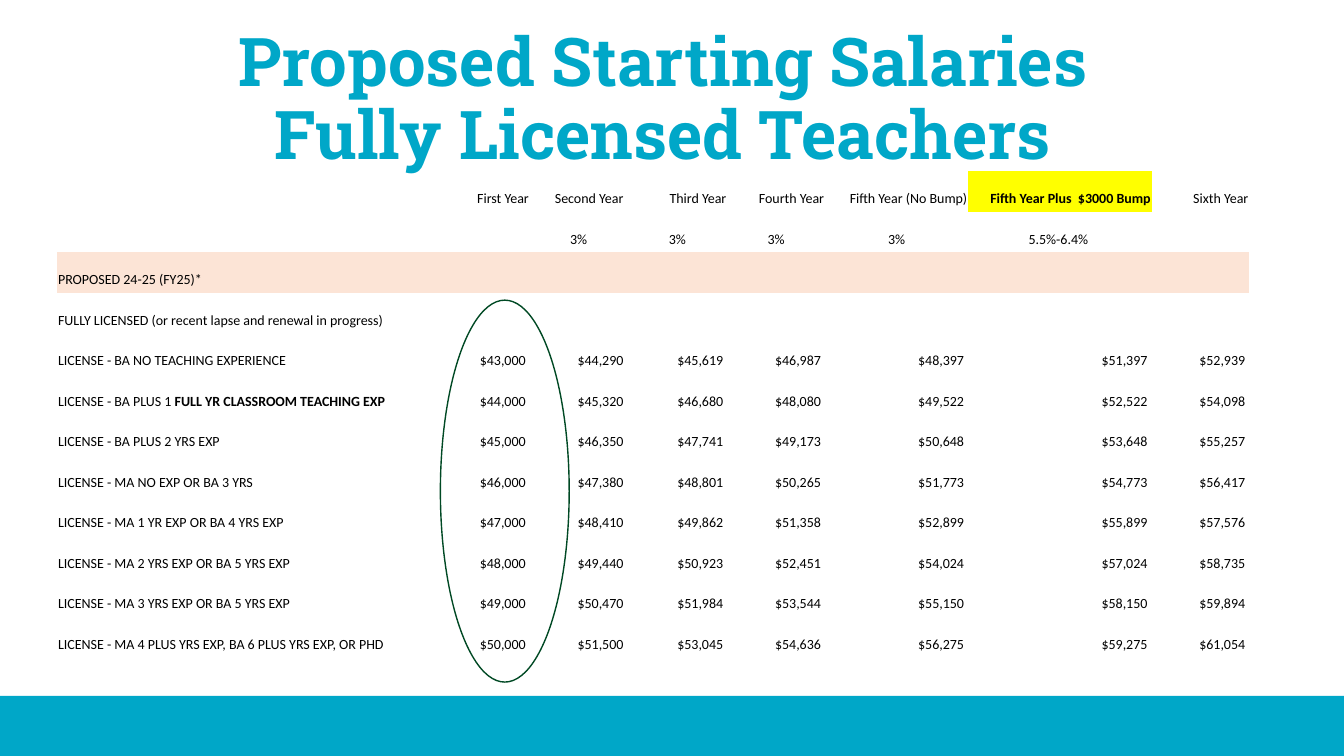
from pptx import Presentation
from pptx.dml.color import RGBColor
from pptx.enum.shapes import MSO_SHAPE
from pptx.enum.text import MSO_ANCHOR, MSO_AUTO_SIZE, PP_ALIGN
from pptx.oxml.ns import qn
from pptx.util import Pt

RECT, OVAL = MSO_SHAPE.RECTANGLE, MSO_SHAPE.OVAL
LEFT, CENTER, RIGHT = PP_ALIGN.LEFT, PP_ALIGN.CENTER, PP_ALIGN.RIGHT
MIDDLE, BOTTOM = MSO_ANCHOR.MIDDLE, MSO_ANCHOR.BOTTOM
NO_FIT = MSO_AUTO_SIZE.NONE

TEAL, GREEN, YELLOW, PEACH, BLACK = "00A7C8", "004924", "FFFF00", "FCE4D6", "000000"
NO_STYLE_NO_GRID = "{2D5ABB26-0587-4C30-8999-92F81FD0307C}"

COLUMN_WIDTHS = [267.84, 69.84, 69.84, 71.28, 69.84, 102.24, 131.04, 69.84]
ROW_HEIGHT = 28.92
BUMP_COLUMN, PROPOSED_ROW = 6, 2

HEADERS = ["", "First Year", "Second Year ", "Third Year", "Fourth Year",
           "Fifth Year (No Bump)", "Fifth Year Plus  $3000 Bump", "Sixth Year"]
RAISES = ["", "", "3%", "3%", "3%", "3%", "5.5%-6.4% ", ""]
SECTIONS = ["PROPOSED 24-25 (FY25)*",
            "FULLY LICENSED (or recent lapse and renewal in progress)"]
# A label in two parts has its second part in bold.
SALARIES = [
    (["LICENSE - BA NO TEACHING EXPERIENCE"],
     [43000, 44290, 45619, 46987, 48397, 51397, 52939]),
    (["LICENSE - BA PLUS 1", " FULL YR CLASSROOM TEACHING EXP"],
     [44000, 45320, 46680, 48080, 49522, 52522, 54098]),
    (["LICENSE - BA PLUS 2 YRS EXP"],
     [45000, 46350, 47741, 49173, 50648, 53648, 55257]),
    (["LICENSE - MA NO EXP OR BA 3 YRS"],
     [46000, 47380, 48801, 50265, 51773, 54773, 56417]),
    (["LICENSE - MA 1 YR EXP OR BA 4 YRS EXP"],
     [47000, 48410, 49862, 51358, 52899, 55899, 57576]),
    (["LICENSE - MA 2 YRS EXP OR BA 5 YRS EXP"],
     [48000, 49440, 50923, 52451, 54024, 57024, 58735]),
    (["LICENSE - MA 3 YRS EXP OR BA 5 YRS EXP"],
     [49000, 50470, 51984, 53544, 55150, 58150, 59894]),
    (["LICENSE - MA 4 PLUS YRS EXP, BA 6 PLUS YRS EXP, OR PHD"],
     [50000, 51500, 53045, 54636, 56275, 59275, 61054]),
]


def rgb(value):
    return RGBColor.from_string(value)


def set_margins(frame, left, top, right, bottom):
    frame.margin_left, frame.margin_top = Pt(left), Pt(top)
    frame.margin_right, frame.margin_bottom = Pt(right), Pt(bottom)


class SlideBuilder:
    title_font, body_font = "Roboto Slab", "Calibri"
    title_size, body_size = 48, 10

    def __init__(self, slide):
        self.slide = slide

    def format_font(self, p, name, size, color, bold=None):
        p.font.name, p.font.size, p.font.bold = name, Pt(size), bold
        p.font.color.rgb = rgb(color)

    def title(self, text, left, top, width, height):
        sp = self.slide.shapes.title
        sp.left, sp.top, sp.width, sp.height = map(Pt, (left, top, width, height))
        tf = sp.text_frame
        tf.auto_size, tf.word_wrap, tf.vertical_anchor = NO_FIT, True, MIDDLE
        set_margins(tf, 7.2, 7.2, 7.2, 7.2)
        p = tf.paragraphs[0]
        p.text, p.alignment, p.line_spacing = text, CENTER, 0.9
        self.format_font(p, self.title_font, self.title_size, TEAL, True)

    def shape(self, kind, left, top, width, height, fill=None, line=None):
        sp = self.slide.shapes.add_shape(kind, *map(Pt, (left, top, width, height)))
        sp.shadow.inherit = False
        if fill:
            sp.fill.solid()
            sp.fill.fore_color.rgb = rgb(fill)
        else:
            sp.fill.background()
        if line:
            sp.line.color.rgb, sp.line.width = rgb(line), Pt(1)
        else:
            sp.line.fill.background()

    def table(self, rows, widths, row_height, left, top):
        size = (left, top, sum(widths), row_height * rows)
        gf = self.slide.shapes.add_table(rows, len(widths), *map(Pt, size))
        for style_id in gf.element.iter(qn("a:tableStyleId")):
            style_id.text = NO_STYLE_NO_GRID
        table = gf.table
        table.first_row = table.horz_banding = False
        for column, width in zip(table.columns, widths):
            column.width = Pt(width)
        for row in table.rows:
            row.height = Pt(row_height)
        return table

    def cell(self, cell, parts, align, fill=None, bold=None):
        """Fill a cell; any part after the first is bold."""
        cell.vertical_anchor = BOTTOM
        set_margins(cell, 0.72, 0.72, 0.72, 2.88)
        if fill:
            cell.fill.solid()
            cell.fill.fore_color.rgb = rgb(fill)
        else:
            cell.fill.background()
        p = cell.text_frame.paragraphs[0]
        p.alignment = align
        self.format_font(p, self.body_font, self.body_size, BLACK, bold)
        for i, part in enumerate(parts):
            r = p.add_run()
            r.text = part
            if i:
                r.font.bold = True

    def salary_table(self, left, top):
        blanks = [[]] * (len(COLUMN_WIDTHS) - 1)
        rows = [[[text] if text else [] for text in row] for row in (HEADERS, RAISES)]
        rows += [[[section]] + blanks for section in SECTIONS]
        rows += [[label] + [[f"${pay:,} "] for pay in pays] for label, pays in SALARIES]
        table = self.table(len(rows), COLUMN_WIDTHS, ROW_HEIGHT, left, top)
        for i, row in enumerate(rows):
            for j, parts in enumerate(row):
                is_bump = i == 0 and j == BUMP_COLUMN
                fill = YELLOW if is_bump else PEACH if i == PROPOSED_ROW else None
                align = LEFT if j == 0 else CENTER if i == 1 else RIGHT
                self.cell(table.cell(i, j), parts, align, fill, is_bump or None)


def main():
    prs = Presentation()
    prs.slide_width, prs.slide_height = Pt(960), Pt(540)
    s = SlideBuilder(prs.slides.add_slide(prs.slide_layouts[5]))
    s.shape(RECT, 0, 497, 960, 43, fill=TEAL)
    s.title("Proposed Starting Salaries\vFully Licensed Teachers", 26.6, 28, 894.2, 88.6)
    s.salary_table(40.8, 122.2)
    s.shape(OVAL, 314.6, 214.4, 92, 272.8, line=GREEN)
    prs.save("out.pptx")


if __name__ == "__main__":
    main()
